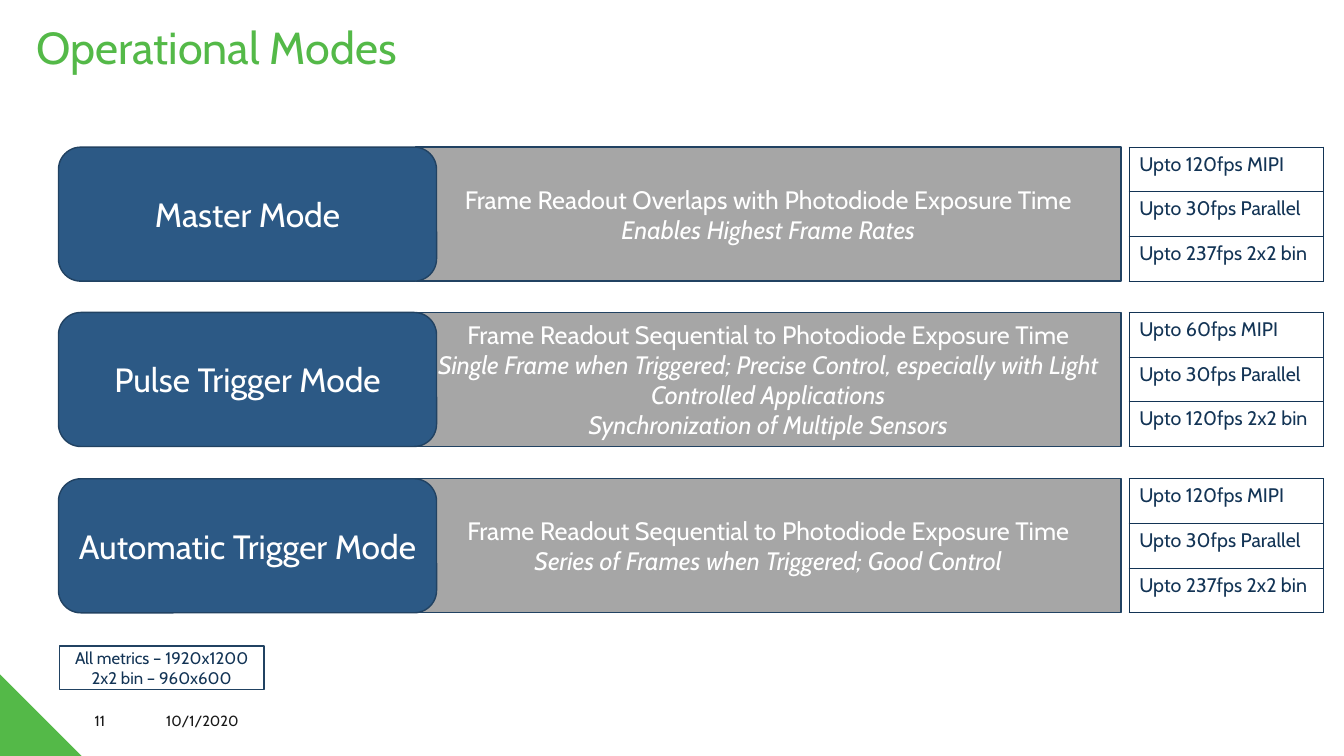
from lxml import etree
from pptx import Presentation
from pptx.dml.color import RGBColor
from pptx.enum.shapes import MSO_SHAPE
from pptx.enum.text import MSO_ANCHOR, PP_ALIGN
from pptx.oxml.ns import qn
from pptx.util import Inches, Pt

RECTANGLE, ROUNDED = MSO_SHAPE.RECTANGLE, MSO_SHAPE.ROUNDED_RECTANGLE
LEFT, CENTER, RIGHT = PP_ALIGN.LEFT, PP_ALIGN.CENTER, PP_ALIGN.RIGHT
TOP, MIDDLE = MSO_ANCHOR.TOP, MSO_ANCHOR.MIDDLE

FONT = "Cabin"
COLORS = {
    "green": "54B948",
    "blue": "2C5985",
    "gray": "A6A6A6",
    "outline": "214262",
    "navy": "133455",
    "white": "FFFFFF",
    "ink": "181818",
}

MODE_LEFT, MODE_WIDTH, MODE_HEIGHT = 0.58, 12.55, 1.33
# Top of the row, mode name, description lines (first one upright), frame rates
MODES = [
    (1.46, "Master Mode",
     ["Frame Readout Overlaps with Photodiode Exposure Time",
      "Enables Highest Frame Rates"],
     ["Upto 120fps MIPI", "Upto 30fps Parallel", "Upto 237fps 2x2 bin"]),
    (3.1, "Pulse Trigger Mode",
     ["Frame Readout Sequential to Photodiode Exposure Time",
      "Single Frame when Triggered; Precise Control, especially with Light "
      "Controlled Applications",
      "Synchronization of Multiple Sensors"],
     ["Upto 60fps MIPI", "Upto 30fps Parallel", "Upto 120fps 2x2 bin"]),
    (4.75, "Automatic Trigger Mode",
     ["Frame Readout Sequential to Photodiode Exposure Time",
      "Series of Frames when Triggered; Good Control"],
     ["Upto 120fps MIPI", "Upto 30fps Parallel", "Upto 237fps 2x2 bin"]),
]


def rgb(name):
    return RGBColor.from_string(COLORS[name])


def write(frame, lines, size, color, align=CENTER, anchor=MIDDLE):
    frame.word_wrap = True
    frame.vertical_anchor = anchor
    frame.text = "\n".join(lines)
    for para in frame.paragraphs:
        para.alignment = align
        for span in para.runs:
            span.font.name = FONT
            span.font.size = Pt(size)
            span.font.color.rgb = rgb(color)


def add_box(page, kind, left, top, width, height, fill=None):
    box = page.shapes.add_shape(kind, Inches(left), Inches(top),
                                Inches(width), Inches(height))
    box.shadow.inherit = False
    if fill:
        box.fill.solid()
        box.fill.fore_color.rgb = rgb(fill)
    else:
        box.fill.background()
    box.line.color.rgb = rgb("outline")
    box.line.width = Pt(1)
    return box


def add_corner(page, left, top, size):
    """Draw the green triangle that fills the lower left corner."""
    builder = page.shapes.build_freeform(Inches(left), Inches(top))
    builder.add_line_segments([(Inches(left + size), Inches(top + size)),
                               (Inches(left), Inches(top + size))])
    corner = builder.convert_to_shape()
    corner.shadow.inherit = False
    corner.fill.solid()
    corner.fill.fore_color.rgb = rgb("green")
    corner.line.fill.background()


def add_title(page, text, left, top, width, height):
    title = page.shapes.title
    title.left, title.top = Inches(left), Inches(top)
    title.width, title.height = Inches(width), Inches(height)
    write(title.text_frame, [text], 32, "green", LEFT)
    title.text_frame.paragraphs[0].line_spacing = 0.9


def add_borders(cell):
    properties = cell._tc.get_or_add_tcPr()
    for side in ("a:lnL", "a:lnR", "a:lnT", "a:lnB"):
        line = etree.SubElement(properties, qn(side), w=str(Pt(1)))
        fill = etree.SubElement(line, qn("a:solidFill"))
        etree.SubElement(fill, qn("a:srgbClr"), val=COLORS["navy"])


def add_rates(page, rates, left, top, width, height):
    table = page.shapes.add_table(len(rates), 1, Inches(left), Inches(top),
                                  Inches(width), Inches(height)).table
    table.first_row = table.horz_banding = False
    for row, rate in enumerate(rates):
        cell = table.cell(row, 0)
        add_borders(cell)
        cell.fill.background()
        write(cell.text_frame, [rate], 14, "navy", LEFT, TOP)


def add_mode(page, mode, left, top, width, height):
    """Place one row: name, description band and frame rate table."""
    name, description, rates = mode
    band = add_box(page, RECTANGLE, left + 3.54, top, 7, height, "gray")
    write(band.text_frame, description, 18, "white")
    for para in band.text_frame.paragraphs[1:]:
        para.runs[0].font.italic = True
    label = add_box(page, ROUNDED, left, top, 3.75, height, "blue")
    write(label.text_frame, [name], 24, "white")
    rates_width = 1.93
    add_rates(page, rates, left + width - rates_width, top, rates_width, height)


def add_metrics(page, left, top, width, height):
    box = add_box(page, RECTANGLE, left, top, width, height)
    write(box.text_frame, ["All metrics – 1920x1200", "2x2 bin – 960x600"],
          12, "navy")


def add_footer(page, left, top, height):
    for text, offset, width, align in (("11", 0, 0.73, RIGHT),
                                       ("10/1/2020", 1.14, 3, LEFT)):
        box = page.shapes.add_textbox(Inches(left + offset), Inches(top),
                                      Inches(width), Inches(height))
        write(box.text_frame, [text], 10.5, "ink", align)


def main():
    deck = Presentation()
    deck.slide_width, deck.slide_height = Inches(13.33), Inches(7.5)
    page = deck.slides.add_slide(deck.slide_layouts[5])
    add_corner(page, 0, 6.69, 0.81)
    add_title(page, "Operational Modes", 0.26, 0, 12.28, 1)
    for top, *mode in MODES:
        add_mode(page, mode, MODE_LEFT, top, MODE_WIDTH, MODE_HEIGHT)
    add_metrics(page, 0.59, 6.41, 2.03, 0.43)
    add_footer(page, 0.41, 6.95, 0.4)
    deck.save("out.pptx")


if __name__ == "__main__":
    main()
